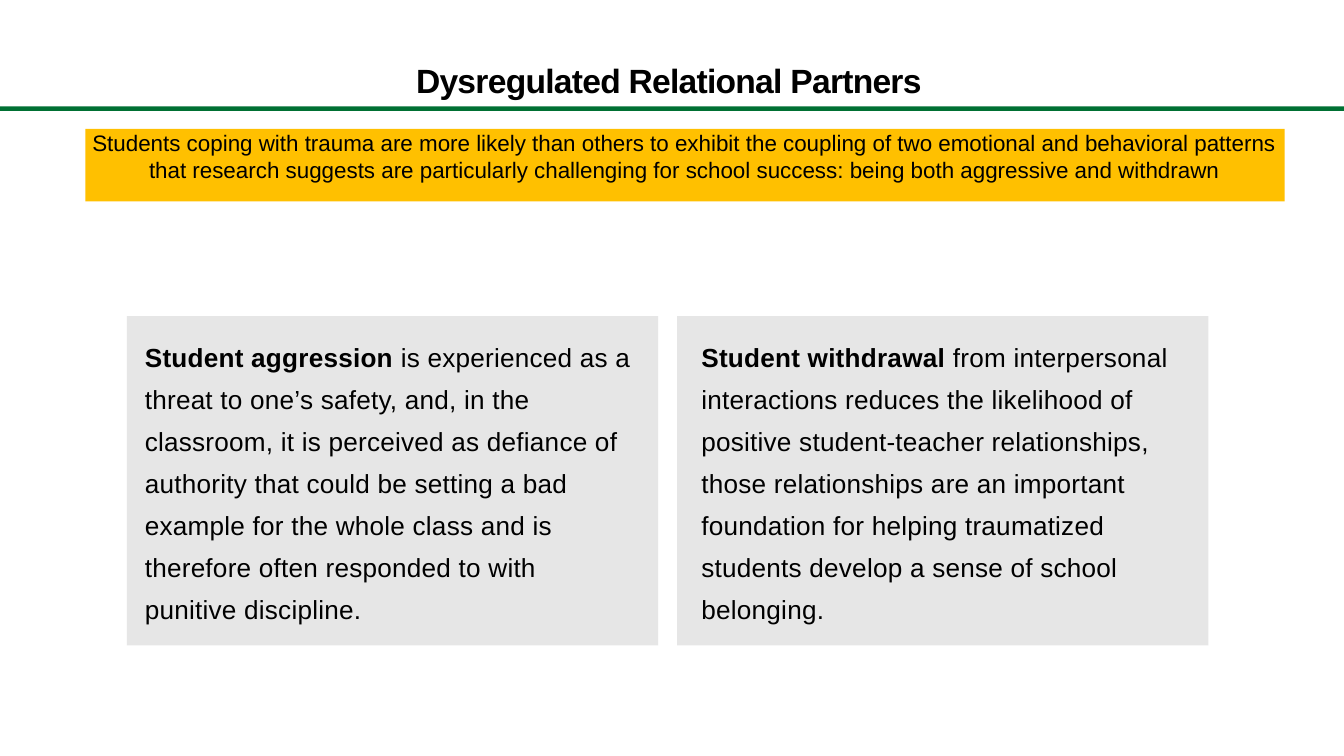
from pptx import Presentation
from pptx.dml.color import RGBColor
from pptx.enum.shapes import MSO_SHAPE
from pptx.enum.text import MSO_ANCHOR, MSO_AUTO_SIZE, PP_ALIGN
from pptx.util import Pt

RECTANGLE = MSO_SHAPE.RECTANGLE
TOP = MSO_ANCHOR.TOP
NO_AUTOFIT = MSO_AUTO_SIZE.NONE
LEFT, CENTER = PP_ALIGN.LEFT, PP_ALIGN.CENTER

TITLE = "Dysregulated Relational Partners"
BANNER = (
    "Students coping with trauma are more likely than others to exhibit the "
    "coupling of two emotional and behavioral patterns that research suggests "
    "are particularly challenging for school success: being both aggressive "
    "and withdrawn"
)
CARDS = [
    {
        "lead": "Student aggression ",
        "body": "is experienced as a threat to one’s safety, and, in the "
                "classroom, it is perceived as defiance of authority that could "
                "be setting a bad example for the whole class and is therefore "
                "often responded to with punitive discipline.",
        "inset": 9.6,
        "text_width": 262,
    },
    {
        "lead": "Student withdrawal ",
        "body": "from interpersonal interactions reduces the likelihood of "
                "positive student-teacher relationships, those relationships "
                "are an important foundation for helping traumatized students "
                "develop a sense of school belonging.",
        "inset": 13,
        "text_width": 257,
    },
]

COLORS = {"bar": "007033", "card": "E6E6E6", "banner": "FFC000", "text": "000000"}
FONT = "Arial"
CARD_LEFT, CARD_TOP, CARD_WIDTH, CARD_HEIGHT = 68, 169.4, 284.6, 176.4
CARD_GAP = 10.2
TEXT_OFFSET, TEXT_HEIGHT = 7.7, 160


def add_block(slide, left, top, width, height, color):
    shape = slide.shapes.add_shape(RECTANGLE, Pt(left), Pt(top), Pt(width), Pt(height))
    shape.shadow.inherit = False
    shape.fill.solid()
    shape.fill.fore_color.rgb = RGBColor.from_string(COLORS[color])
    shape.line.fill.background()
    return shape


def write_text(shape, runs, size, alignment, line_spacing=None, tracking=0):
    frame = shape.text_frame
    frame.word_wrap = True
    frame.auto_size = NO_AUTOFIT
    frame.vertical_anchor = TOP
    frame.margin_left = frame.margin_right = frame.margin_top = frame.margin_bottom = 0
    paragraph = frame.paragraphs[0]
    paragraph.alignment = alignment
    if line_spacing:
        paragraph.line_spacing = Pt(line_spacing)
    paragraph.font.name = FONT
    paragraph.font.size = Pt(size)
    paragraph.font.color.rgb = RGBColor.from_string(COLORS["text"])
    for text, bold in runs:
        run = paragraph.add_run()
        run.text = text
        run.font.bold = bold
        if tracking:
            run.font._element.set("spc", str(round(tracking * 100)))


presentation = Presentation()
presentation.slide_width = Pt(720)
presentation.slide_height = Pt(405)
slide = presentation.slides.add_slide(presentation.slide_layouts[5])

add_block(slide, -18, 57, 756.7, 2.4, "bar")

title = slide.shapes.title
title.left, title.top, title.width, title.height = Pt(39), Pt(5.8), Pt(638.6), Pt(40.3)
write_text(title, [(TITLE, True)], 18, CENTER, 48, -0.4)

for index, card in enumerate(CARDS):
    left = CARD_LEFT + index * (CARD_WIDTH + CARD_GAP)
    add_block(slide, left, CARD_TOP, CARD_WIDTH, CARD_HEIGHT, "card")
    box = slide.shapes.add_textbox(
        Pt(left + card["inset"]), Pt(CARD_TOP + TEXT_OFFSET),
        Pt(card["text_width"]), Pt(TEXT_HEIGHT))
    write_text(box, [(card["lead"], True), (card["body"], False)], 14, LEFT, 22.5, 0.1)

banner = add_block(slide, 45.8, 69.1, 642.4, 38.8, "banner")
write_text(banner, [(BANNER, False)], 12, CENTER)

presentation.save("out.pptx")
